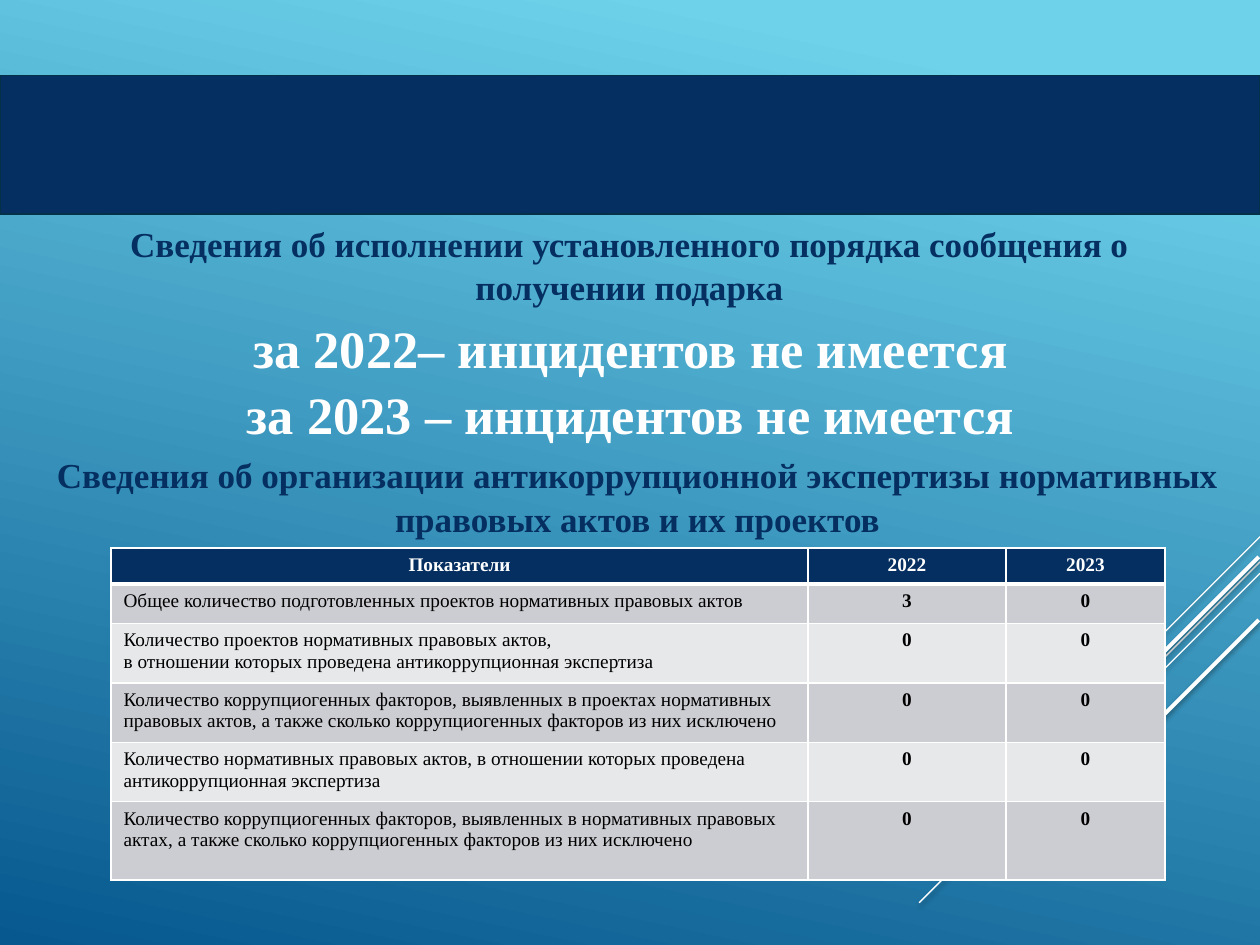
import pptx
import pptx.util
import pptx.dml.color
import pptx.enum.text
import pptx.enum.shapes
import pptx.oxml
import pptx.oxml.ns

Pt = pptx.util.Pt
RGB = pptx.dml.color.RGBColor.from_string
Align = pptx.enum.text.PP_ALIGN
Shape = pptx.enum.shapes.MSO_SHAPE

theme = {
    "font": "Times New Roman",
    "navy": "052F61", "edge": "043148", "white": "FFFFFF", "black": "000000",
    "bands": ("CCCDD2", "E7E8EA"),
    "sky": ((0.1, "6ED2EB"), (1, "06588E")),
    "head": 20, "fact": 30, "cell": 11,
}

gift = "Сведения об исполнении установленного порядка сообщения о получении подарка"
facts = "за 2022– инцидентов не имеется\nза 2023 – инцидентов не имеется"
audit = ("Сведения об организации антикоррупционной экспертизы "
         "нормативных правовых актов и их проектов")
rows = [
    ("Показатели", "2022", "2023"),
    ("Общее количество подготовленных проектов нормативных правовых актов", "3", "0"),
    ("Количество проектов нормативных правовых актов,\n"
     "в отношении которых проведена антикоррупционная экспертиза", "0", "0"),
    ("Количество коррупциогенных факторов, выявленных в проектах нормативных правовых "
     "актов, а также сколько коррупциогенных факторов из них исключено", "0", "0"),
    ("Количество нормативных правовых актов, в отношении которых проведена "
     "антикоррупционная экспертиза", "0", "0"),
    ("Количество коррупциогенных факторов, выявленных в нормативных правовых актах, "
     "а также сколько коррупциогенных факторов из них исключено", "0", "0"),
]
widths = (398.4, 113, 91)
heights = (20.5, 22.5, 34, 34, 34, 44.6)
rays = [
    (720, 306.7, 59.8, 0.75),
    (720, 321.1, 194.8, 0.75),
    (720, 327.6, 123.8, 0.75),
    (719.3, 318.2, 113, 2.25),
    (719.3, 354.2, 82.1, 2.25),
]


def make(xml):
    return pptx.oxml.parse_xml(
        xml.replace(">", f" {pptx.oxml.ns.nsdecls('a')}>", 1))


def style(frame, size, color, bold=True, align=Align.CENTER, space=1):
    for para in frame.paragraphs:
        para.alignment = align
        para.line_spacing = space
        para.space_before = para.space_after = Pt(0)
        for run in para.runs:
            font = run.font
            font.name, font.size, font.bold = theme["font"], Pt(size), bold
            font.color.rgb = RGB(color)


def write(shape, box, text, size, color):
    shape.left, shape.top, shape.width, shape.height = map(Pt, box)
    frame = shape.text_frame
    frame.text = text
    frame.word_wrap = True
    frame.auto_size = pptx.enum.text.MSO_AUTO_SIZE.NONE
    frame.vertical_anchor = pptx.enum.text.MSO_ANCHOR.TOP
    style(frame, size, color, space=1.04)


def border(cell, sides):
    props = cell._tc.get_or_add_tcPr()
    for spot, (side, width) in enumerate(sides.items()):
        props.insert(spot, make(
            f'<a:{side} w="{Pt(width)}"><a:solidFill>'
            f'<a:srgbClr val="{theme["white"]}"/></a:solidFill></a:{side}>'))


def main():
    deck = pptx.Presentation()
    deck.slide_width, deck.slide_height = Pt(720), Pt(540)
    slide = deck.slides.add_slide(deck.slide_layouts[1])
    shapes = slide.shapes

    fill = slide.background.fill
    fill.gradient()
    fill.gradient_angle = 258
    for stop, (place, color) in zip(fill.gradient_stops, theme["sky"]):
        stop.position = place
        stop.color.rgb = RGB(color)

    for x, y, run, width in rays:
        ray = shapes.add_connector(
            pptx.enum.shapes.MSO_CONNECTOR.STRAIGHT,
            Pt(x), Pt(y), Pt(x - run), Pt(y + run))
        ray.line.color.rgb = RGB(theme["white"])
        ray.line.width = Pt(width)
        ray._element.spPr.append(make(
            f'<a:effectLst><a:outerShdw blurRad="{Pt(3.1)}" dist="{Pt(1.6)}" '
            f'dir="5400000" rotWithShape="0"><a:srgbClr val="{theme["black"]}">'
            '<a:alpha val="38000"/></a:srgbClr></a:outerShdw></a:effectLst>'))

    band = shapes.add_shape(Shape.FLOWCHART_PROCESS, 0, Pt(43.2), Pt(720), Pt(79.2))
    band.shadow.inherit = False
    band.fill.solid()
    band.fill.fore_color.rgb = RGB(theme["navy"])
    band.line.color.rgb = RGB(theme["edge"])
    band.line.width = Pt(1)

    write(shapes.title, (25.2, 122.4, 669, 55.4), gift, theme["head"], theme["navy"])
    body = slide.placeholders[1]
    write(body, (86.4, 175.7, 548, 80), facts, theme["fact"], theme["white"])
    for para in body.text_frame.paragraphs:
        props = para._p.get_or_add_pPr()
        props.set("marL", "0")
        props.set("indent", "0")
        props.append(make("<a:buNone></a:buNone>"))
    note = shapes.add_textbox(0, 0, 0, 0)
    write(note, (0, 254.9, 728.6, 55.4), audit, theme["head"], theme["navy"])

    grid = shapes.add_table(len(rows), len(widths), Pt(63.4), Pt(313.2),
                            Pt(sum(widths)), Pt(sum(heights))).table
    for col, width in zip(grid.columns, widths):
        col.width = Pt(width)
    for r, (row, height) in enumerate(zip(rows, heights)):
        grid.rows[r].height = Pt(height)
        top = r == 0
        for c, text in enumerate(row):
            cell = grid.cell(r, c)
            cell.text_frame.text = text
            style(cell.text_frame, theme["cell"], theme["white" if top else "black"],
                  top or c > 0, Align.CENTER if top or c else Align.LEFT)
            cell.fill.solid()
            cell.fill.fore_color.rgb = RGB(
                theme["navy"] if top else theme["bands"][(r - 1) % 2])
            border(cell, {"lnL": 1, "lnR": 1, "lnT": 3 if r == 1 else 1,
                          "lnB": 3 if top else 1})

    deck.save("out.pptx")


if __name__ == "__main__":
    main()
